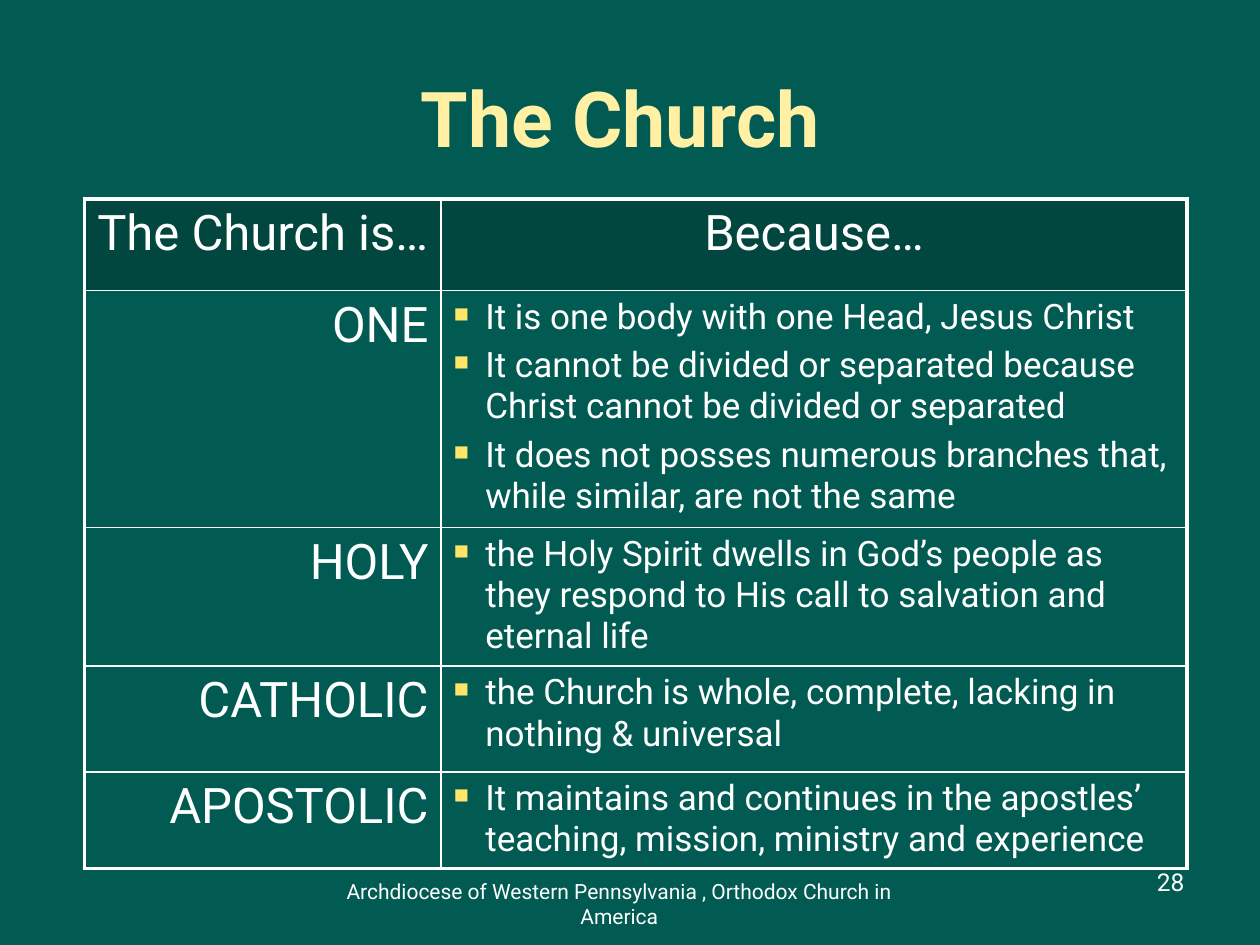
from lxml import etree
from pptx import Presentation
from pptx.dml.color import RGBColor
from pptx.enum.text import MSO_ANCHOR, PP_ALIGN
from pptx.oxml.ns import qn
from pptx.util import Cm, Pt

LEFT, MID, RIGHT = PP_ALIGN.LEFT, PP_ALIGN.CENTER, PP_ALIGN.RIGHT
TOP, CENTRE = MSO_ANCHOR.TOP, MSO_ANCHOR.MIDDLE

# Content
TITLE = "The Church "
HEADS = ["The Church is…", "Because…"]
MARKS = [
    ("ONE", [
        "It is one body with one Head, Jesus Christ",
        "It cannot be divided or separated because Christ cannot be divided or separated",
        "It does not posses numerous branches that, while similar, are not the same",
    ]),
    ("HOLY", ["the Holy Spirit dwells in God’s people as they respond to His call "
              "to salvation and eternal life"]),
    ("CATHOLIC", ["the Church is whole, complete, lacking in nothing & universal"]),
    ("APOSTOLIC", ["It maintains and continues in the apostles’ teaching, mission, "
                   "ministry and experience"]),
]
FOOTER = "Archdiocese of Western Pennsylvania , Orthodox Church in America"
NUMBER = "28"

THEME = {
    "font": "Roboto",
    "back": "015B52", "head": "014740", "title": "FFF0A3",
    "text": "FFFFFF", "bullet": "FEE56A",
    "title_size": 44, "label_size": 28, "point_size": 20,
    "number_size": 14, "footer_size": 12,
    "thick": 2.25, "thin": 1,
}

# Places, in cm
COLS = [7.19, 15.04]
ROWS = [1.85, 4.27, 1.88, 2.13, 1.93]
GRID = (1.7, 4.01, sum(COLS), sum(ROWS))
TITLE_BOX = (1.27, 0.76, 22.86, 3.18)
NUMBER_BOX = (18.21, 17.35, 5.92, 1.27)
FOOTER_BOX = (5.92, 17.58, 13.13, 1.27)
INDENT = 0.64


def add_bullet(para):
    props = para._p.get_or_add_pPr()
    props.set("marL", str(Cm(INDENT)))
    props.set("indent", str(-Cm(INDENT)))
    tint = etree.SubElement(props, qn("a:buClr"))
    etree.SubElement(tint, qn("a:srgbClr"), val=THEME["bullet"])
    etree.SubElement(props, qn("a:buSzPct"), val="60000")
    etree.SubElement(props, qn("a:buChar"), char="■")


def write(frame, lines, size, align, color="text", bold=False, gap=0, bullet=False):
    for i, line in enumerate(lines):
        para = frame.add_paragraph() if i else frame.paragraphs[0]
        para.text = line
        para.alignment = align
        para.space_before = Pt(THEME[size] * gap)
        if bullet:
            add_bullet(para)
        font = para.font
        font.name, font.size, font.bold = THEME["font"], Pt(THEME[size]), bold
        font.color.rgb = RGBColor.from_string(THEME[color])


def add_text(slide, box, text, size, align, color="text", bold=False, anchor=TOP):
    frame = slide.shapes.add_textbox(*map(Cm, box)).text_frame
    frame.word_wrap = True
    frame.vertical_anchor = anchor
    write(frame, [text], size, align, color, bold)


def set_edges(cell, row, col):
    # Outer edges are thick, inner edges thin
    outer = {"L": col == 0, "R": col == len(COLS) - 1,
             "T": row == 0, "B": row == len(ROWS) - 1}
    props = cell._tc.get_or_add_tcPr()
    for i, (side, edge) in enumerate(outer.items()):
        width = THEME["thick" if edge else "thin"]
        line = etree.Element(qn("a:ln" + side), w=str(Pt(width)))
        fill = etree.SubElement(line, qn("a:solidFill"))
        etree.SubElement(fill, qn("a:srgbClr"), val=THEME["text"])
        props.insert(i, line)


def add_grid(slide):
    table = slide.shapes.add_table(len(ROWS), len(COLS), *map(Cm, GRID)).table
    table.first_row = table.horz_banding = False
    for col, width in zip(table.columns, COLS):
        col.width = Cm(width)
    for row, height in zip(table.rows, ROWS):
        row.height = Cm(height)

    # Header row
    for c, head in enumerate(HEADS):
        write(table.cell(0, c).text_frame, [head], "label_size", MID, gap=0.2)
    # Labels and their reasons
    for r, (label, points) in enumerate(MARKS, 1):
        write(table.cell(r, 0).text_frame, [label], "label_size", RIGHT, gap=0.2)
        write(table.cell(r, 1).text_frame, points, "point_size", LEFT,
              gap=0.2, bullet=True)
    # Fills and borders
    for r in range(len(ROWS)):
        for c in range(len(COLS)):
            cell = table.cell(r, c)
            if r == 0:
                cell.fill.solid()
                cell.fill.fore_color.rgb = RGBColor.from_string(THEME["head"])
            else:
                cell.fill.background()
            set_edges(cell, r, c)


def main():
    deck = Presentation()
    deck.slide_width, deck.slide_height = Cm(25.4), Cm(19.05)
    slide = deck.slides.add_slide(deck.slide_layouts[6])
    fill = slide.background.fill
    fill.solid()
    fill.fore_color.rgb = RGBColor.from_string(THEME["back"])

    add_text(slide, TITLE_BOX, TITLE, "title_size", MID, "title", True, CENTRE)
    add_grid(slide)
    add_text(slide, NUMBER_BOX, NUMBER, "number_size", RIGHT)
    add_text(slide, FOOTER_BOX, FOOTER, "footer_size", MID)
    deck.save("out.pptx")


if __name__ == "__main__":
    main()
